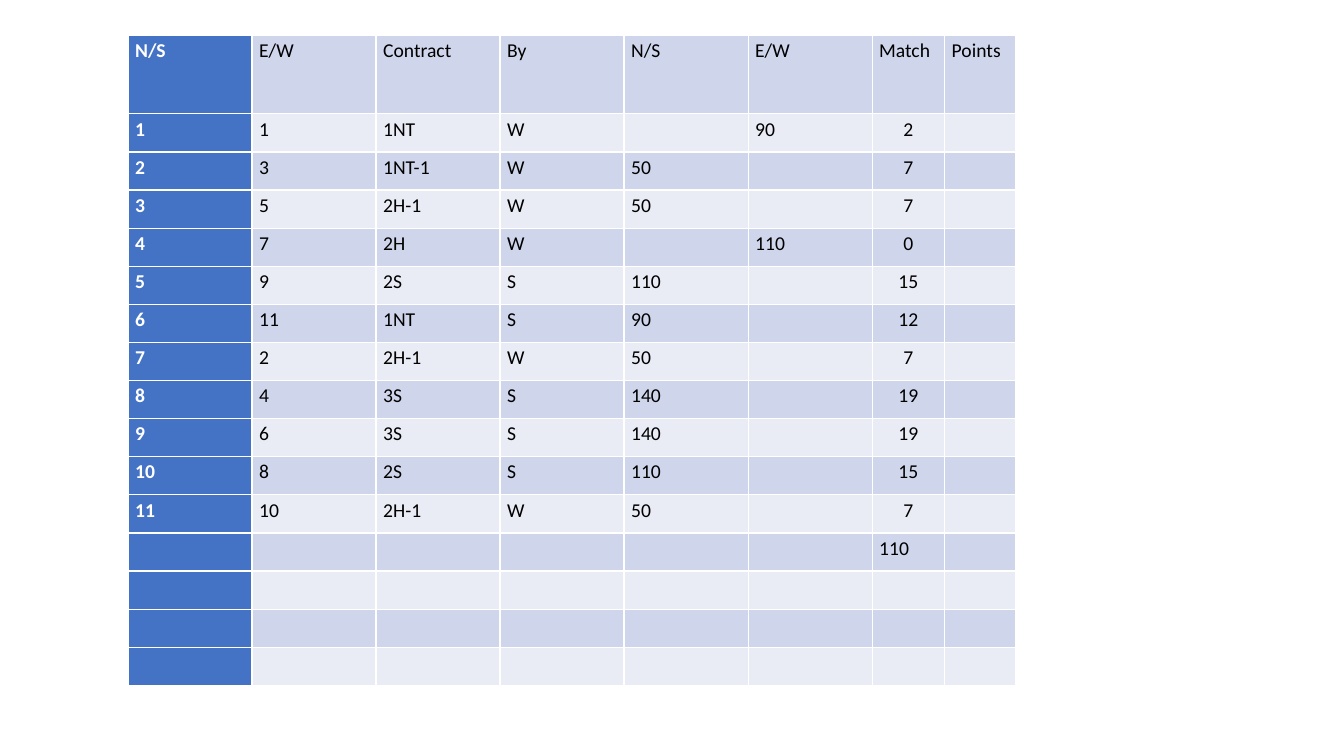
"""Build a slide with the score table of a bridge tournament board."""
from dataclasses import dataclass

from lxml import etree
from pptx import Presentation
from pptx.dml.color import RGBColor
from pptx.enum.text import MSO_ANCHOR, PP_ALIGN
from pptx.oxml.ns import qn
from pptx.util import Inches, Pt

LEFT, CENTER = PP_ALIGN.LEFT, PP_ALIGN.CENTER
TOP = MSO_ANCHOR.TOP

HEADINGS = ["N/S", "E/W", "Contract", "By", "N/S", "E/W", "Match", "Points"]
RESULTS = [
    ["1", "1", "1NT", "W", "", "90", "2", ""],
    ["2", "3", "1NT-1", "W", "50", "", "7", ""],
    ["3", "5", "2H-1", "W", "50", "", "7", ""],
    ["4", "7", "2H", "W", "", "110", "0", ""],
    ["5", "9", "2S", "S", "110", "", "15", ""],
    ["6", "11", "1NT", "S", "90", "", "12", ""],
    ["7", "2", "2H-1", "W", "50", "", "7", ""],
    ["8", "4", "3S", "S", "140", "", "19", ""],
    ["9", "6", "3S", "S", "140", "", "19", ""],
    ["10", "8", "2S", "S", "110", "", "15", ""],
    ["11", "10", "2H-1", "W", "50", "", "7", ""],
]
TOTAL = ["", "", "", "", "", "", "110", ""]
SPARE_ROWS = 3
MATCH_COLUMN = 6
COLUMN_WIDTHS = [1.23] * 6 + [0.72, 0.7]
TABLE_LEFT, TABLE_TOP, TABLE_HEIGHT, HEADING_HEIGHT = 1.27, 0.35, 6.45, 0.78


@dataclass(frozen=True)
class Theme:
    """Hold the colours and type sizes of the slide."""
    font: str = "Calibri"
    size: float = 14
    line_spacing: float = 1.15
    pair: str = "4472C4"
    bands: tuple = ("CFD5EA", "E9EBF5")
    border: str = "FFFFFF"
    border_width: float = 1
    text: str = "000000"
    pair_text: str = "FFFFFF"


def write_text(cell, text, *, theme, color, bold=False, align=LEFT):
    """Write one formatted paragraph into a cell."""
    paragraph = cell.text_frame.paragraphs[0]
    paragraph.alignment = align
    paragraph.line_spacing = theme.line_spacing
    run = paragraph.add_run()
    run.text = text
    run.font.name = theme.font
    run.font.size = Pt(theme.size)
    run.font.bold = bold
    run.font.color.rgb = RGBColor.from_string(color)


class ScoreSlide:
    """Draw styled elements on the current slide."""

    def __init__(self, slide, theme):
        self.slide = slide
        self.theme = theme

    def add_borders(self, cell):
        """Give a cell a solid line on each side."""
        properties = cell._tc.get_or_add_tcPr()
        for side in ("lnL", "lnR", "lnT", "lnB"):
            line = etree.SubElement(properties, qn(f"a:{side}"), w=str(Pt(self.theme.border_width)))
            fill = etree.SubElement(line, qn("a:solidFill"))
            etree.SubElement(fill, qn("a:srgbClr"), val=self.theme.border)

    def style_cell(self, cell, color):
        """Set the borders, fill and margins of a cell."""
        self.add_borders(cell)
        cell.fill.solid()
        cell.fill.fore_color.rgb = RGBColor.from_string(color)
        cell.margin_left = cell.margin_right = Inches(0.07)
        cell.margin_top = cell.margin_bottom = Inches(0)
        cell.vertical_anchor = TOP

    def add_table(self, rows):
        """Add the score table with a coloured first column and banded rows."""
        theme = self.theme
        table = self.slide.shapes.add_table(
            len(rows), len(COLUMN_WIDTHS), Inches(TABLE_LEFT), Inches(TABLE_TOP),
            Inches(sum(COLUMN_WIDTHS)), Inches(TABLE_HEIGHT)).table
        table.first_row = table.horz_banding = False
        for column, width in zip(table.columns, COLUMN_WIDTHS):
            column.width = Inches(width)
        row_height = (TABLE_HEIGHT - HEADING_HEIGHT) / (len(rows) - 1)
        for row_index, values in enumerate(rows):
            table.rows[row_index].height = Inches(row_height if row_index else HEADING_HEIGHT)
            for column_index, text in enumerate(values):
                cell = table.cell(row_index, column_index)
                is_pair = column_index == 0
                self.style_cell(cell, theme.pair if is_pair else theme.bands[row_index % 2])
                is_score = column_index == MATCH_COLUMN and 1 <= row_index <= len(RESULTS)
                if text:
                    write_text(cell, text, theme=theme, bold=is_pair,
                               color=theme.pair_text if is_pair else theme.text,
                               align=CENTER if is_score else LEFT)


def main():
    """Build and save the presentation."""
    presentation = Presentation()
    presentation.slide_width = Inches(13.33)
    presentation.slide_height = Inches(7.5)
    slide = presentation.slides.add_slide(presentation.slide_layouts[6])
    spare = [[""] * len(HEADINGS)] * SPARE_ROWS
    ScoreSlide(slide, Theme()).add_table([HEADINGS, *RESULTS, TOTAL, *spare])
    presentation.save("out.pptx")


if __name__ == "__main__":
    main()
